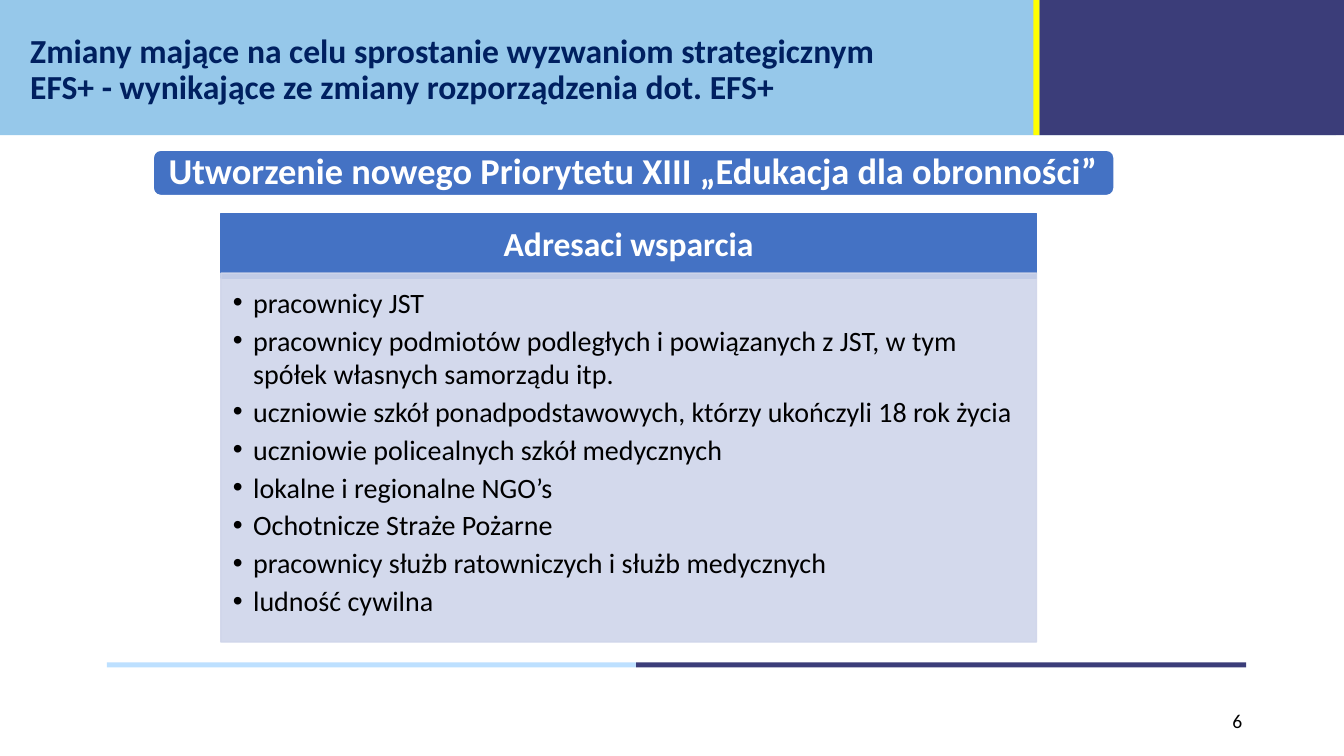
from lxml import etree
from pptx import Presentation
from pptx.dml.color import RGBColor
from pptx.enum.shapes import MSO_SHAPE
from pptx.enum.text import MSO_ANCHOR, MSO_AUTO_SIZE, PP_ALIGN
from pptx.oxml.ns import qn
from pptx.util import Inches, Pt

RECT, ROUNDED = MSO_SHAPE.RECTANGLE, MSO_SHAPE.ROUNDED_RECTANGLE
TOP, MIDDLE = MSO_ANCHOR.TOP, MSO_ANCHOR.MIDDLE
LEFT, CENTER, RIGHT = PP_ALIGN.LEFT, PP_ALIGN.CENTER, PP_ALIGN.RIGHT
NO_FIT = MSO_AUTO_SIZE.NONE

FONT = "Calibri"
SKY, PALE_SKY, NAVY, YELLOW = "96C8EA", "BDE0FF", "3B3D79", "FFFF00"
BLUE, PALE_BLUE, TITLE_BLUE = "4472C4", "CFD5EA", "002060"
WHITE, BLACK = "FFFFFF", "000000"

BARS = [
    (0, -0.06, 13.25, 1.4, SKY),
    (10.31, -0.06, 3.02, 1.4, NAVY),
    (10.25, -0.06, 0.06, 1.4, YELLOW),
    (1.06, 6.57, 5.25, 0.05, PALE_SKY),
    (6.31, 6.57, 6.05, 0.05, NAVY),
]
TITLE = [
    "Zmiany mające na celu sprostanie wyzwaniom strategicznym",
    "EFS+ - wynikające ze zmiany rozporządzenia dot. EFS+",
]
PRIORITY = "Utworzenie nowego Priorytetu XIII „Edukacja dla obronności”"
ADDRESSEES_HEADING = "Adresaci wsparcia"
ADDRESSEES = [
    "pracownicy JST",
    "pracownicy podmiotów podległych i powiązanych z JST, w tym spółek własnych samorządu itp.",
    "uczniowie szkół ponadpodstawowych, którzy ukończyli 18 rok życia",
    "uczniowie policealnych szkół medycznych",
    "lokalne i regionalne NGO’s",
    "Ochotnicze Straże Pożarne",
    "pracownicy służb ratowniczych i służb medycznych",
    "ludność cywilna",
]


def rgb(color):
    """Turn a hex string into a colour."""
    return RGBColor.from_string(color)


def paint(shape, fill, line=None):
    """Fill a shape and give it a thin outline or none."""
    shape.fill.solid()
    shape.fill.fore_color.rgb = rgb(fill)
    if line:
        shape.line.color.rgb = rgb(line)
        shape.line.width = Pt(1)
    else:
        shape.line.fill.background()


def set_opacity(shape, percent):
    """Make the fill and outline of a shape partly transparent."""
    for color in shape.element.spPr.iter(qn("a:srgbClr")):
        etree.SubElement(color, qn("a:alpha"), val=str(percent * 1000))


def add_block(slide, kind, left, top, width, height, fill, line=None):
    """Add a flat coloured shape."""
    block = slide.shapes.add_shape(
        kind, Inches(left), Inches(top), Inches(width), Inches(height))
    block.shadow.inherit = False
    paint(block, fill, line)
    return block


def place_on_top(placeholder, left, top, width, height):
    """Move a placeholder into position and in front of other shapes."""
    placeholder.left, placeholder.top = Inches(left), Inches(top)
    placeholder.width, placeholder.height = Inches(width), Inches(height)
    placeholder.element.getparent().append(placeholder.element)


def add_bullet(paragraph):
    """Give a paragraph a round bullet with a hanging indent."""
    properties = paragraph._p.get_or_add_pPr()
    properties.set("marL", str(Inches(0.2)))
    properties.set("indent", str(-Inches(0.2)))
    etree.SubElement(properties, qn("a:buChar"), char="•")


def write(shape, lines, size, color, bold=False, align=LEFT, anchor=MIDDLE,
          insets=(0.1, 0.05, 0.1, 0.05), spacing=0.9, after=0, bulleted=False):
    """Write formatted paragraphs into a shape."""
    frame = shape.text_frame
    frame.text = "\n".join(lines)
    frame.word_wrap = True
    frame.auto_size = NO_FIT
    frame.vertical_anchor = anchor
    (frame.margin_left, frame.margin_top,
     frame.margin_right, frame.margin_bottom) = map(Inches, insets)
    for paragraph in frame.paragraphs:
        if bulleted:
            add_bullet(paragraph)
        paragraph.alignment = align
        paragraph.line_spacing = spacing
        paragraph.space_before = Pt(0)
        paragraph.space_after = Pt(after)
        paragraph.font.name = FONT
        paragraph.font.size = Pt(size)
        paragraph.font.bold = bold
        paragraph.font.color.rgb = rgb(color)


def main():
    """Build the slide and save it."""
    deck = Presentation()
    deck.slide_width, deck.slide_height = Inches(13.33), Inches(7.5)
    slide = deck.slides.add_slide(deck.slide_layouts[1])
    title, addressees = slide.placeholders

    for *box, color in BARS:
        add_block(slide, RECT, *box, color)

    place_on_top(title, 0.2, 0, 10.04, 1.4)
    write(title, TITLE, 24, TITLE_BLUE, bold=True)

    priority = add_block(slide, ROUNDED, 1.52, 1.49, 9.53, 0.45, BLUE, WHITE)
    write(priority, [PRIORITY], 26, WHITE, bold=True, align=CENTER,
          insets=(0.1, 0, 0.1, 0))

    heading = add_block(slide, RECT, 2.19, 2.12, 8.09, 0.64, BLUE, BLUE)
    write(heading, [ADDRESSEES_HEADING], 24, WHITE, bold=True, align=CENTER,
          insets=(0.19, 0.11, 0.19, 0.11))

    place_on_top(addressees, 2.19, 2.71, 8.09, 3.66)
    paint(addressees, PALE_BLUE, PALE_BLUE)
    set_opacity(addressees, 90)
    write(addressees, ADDRESSEES, 20, BLACK, anchor=TOP, spacing=1.0, after=3,
          insets=(0.12, 0.12, 0.16, 0.17), bulleted=True)

    page_number = slide.shapes.add_textbox(
        Inches(9.42), Inches(6.95), Inches(3), Inches(0.4))
    write(page_number, ["6"], 14, BLACK, align=RIGHT, spacing=1.0)

    deck.save("out.pptx")


if __name__ == "__main__":
    main()
